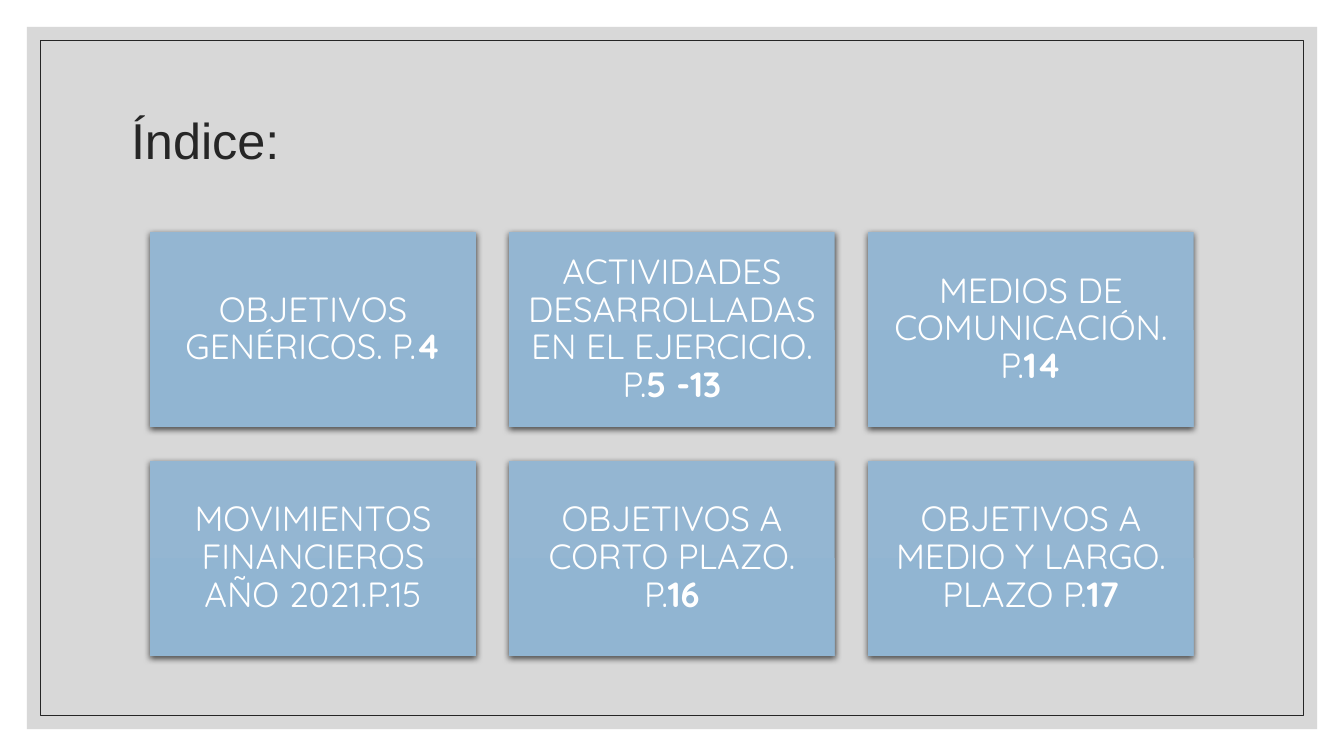
import lxml.etree
import pptx
import pptx.dml.color
import pptx.enum.shapes
import pptx.enum.text
import pptx.oxml
import pptx.oxml.ns
import pptx.util


def colour(value):
    return pptx.dml.color.RGBColor.from_string(value)


class IndexSlide:
    heading_font, card_font = "Arial", "Quicksand"
    ink, paper, panel = "262626", "FFFFFF", "BFBFBF"
    card_top, card_bottom = "94B6D2", "91B5D2"
    grid_left, grid_top = 1.49, 2.3
    card_width, card_height, gap = 3.23, 1.94, 0.33

    def __init__(self, presentation):
        self.width = presentation.slide_width
        self.height = presentation.slide_height
        self.slide = presentation.slides.add_slide(presentation.slide_layouts[5])
        background = self.slide.background.fill
        background.solid()
        background.fore_color.rgb = colour(self.paper)

    def rectangle(self, left, top, width, height):
        shape = self.slide.shapes.add_shape(
            pptx.enum.shapes.MSO_SHAPE.RECTANGLE, left, top, width, height)
        shape.shadow.inherit = False
        shape.line.fill.background()
        return shape

    def inset(self, share):
        margin = int(self.width * share)
        return self.rectangle(margin, margin,
                              self.width - 2 * margin, self.height - 2 * margin)

    def backdrop(self, share, opacity):
        panel = self.inset(share)
        panel.fill.solid()
        panel.fill.fore_color.rgb = colour(self.panel)
        tint = panel.element.spPr.find(".//" + pptx.oxml.ns.qn("a:srgbClr"))
        lxml.etree.SubElement(tint, pptx.oxml.ns.qn("a:alpha"), val=str(opacity * 1000))

    def border(self, share):
        frame = self.inset(share)
        frame.fill.background()
        frame.line.color.rgb = colour(self.ink)
        frame.line.width = pptx.util.Pt(0.5)

    def set_words(self, frame, parts, size, font, ink, alignment):
        frame.word_wrap = True
        frame.vertical_anchor = pptx.enum.text.MSO_ANCHOR.MIDDLE
        paragraph = frame.paragraphs[0]
        paragraph.alignment = alignment
        paragraph.line_spacing = 0.9
        for position, part in enumerate(parts):
            run = paragraph.add_run()
            run.text = part
            run.font.name = font
            run.font.size = pptx.util.Pt(size)
            run.font.bold = position > 0
            run.font.color.rgb = colour(ink)

    def heading(self, text, left, top, width, height):
        title = self.slide.shapes.title
        title.left, title.width = int(self.width * left), int(self.width * width)
        title.top, title.height = int(self.height * top), int(self.height * height)
        title.element.getparent().append(title.element)
        self.set_words(title.text_frame, [text], 36, self.heading_font, self.ink,
                       pptx.enum.text.PP_ALIGN.LEFT)

    def cast_shadow(self, shape):
        effects = shape.element.spPr.find(pptx.oxml.ns.qn("a:effectLst"))
        effects.append(pptx.oxml.parse_xml(
            f'<a:outerShdw {pptx.oxml.ns.nsdecls("a")} blurRad="{pptx.util.Pt(4.5)}" '
            f'dist="{pptx.util.Pt(1.5)}" dir="5400000" algn="ctr" rotWithShape="0">'
            '<a:srgbClr val="000000"><a:alpha val="63000"/></a:srgbClr></a:outerShdw>'))

    def card(self, column, row, parts):
        card = self.rectangle(
            pptx.util.Inches(self.grid_left + column * (self.card_width + self.gap)),
            pptx.util.Inches(self.grid_top + row * (self.card_height + self.gap)),
            pptx.util.Inches(self.card_width), pptx.util.Inches(self.card_height))
        card.fill.gradient()
        card.fill.gradient_angle = 270
        for stop, shade in zip(card.fill.gradient_stops, (self.card_top, self.card_bottom)):
            stop.color.rgb = colour(shade)
        self.cast_shadow(card)
        frame = card.text_frame
        frame.margin_left = frame.margin_right = pptx.util.Inches(0.1)
        frame.margin_top = frame.margin_bottom = pptx.util.Inches(0.1)
        self.set_words(frame, parts, 25, self.card_font, self.paper,
                       pptx.enum.text.PP_ALIGN.CENTER)


def main():
    sections = [
        ("OBJETIVOS GENÉRICOS. P.", "4"),
        ("ACTIVIDADES DESARROLLADAS EN EL EJERCICIO. P.", "5 -13"),
        ("MEDIOS DE COMUNICACIÓN. P.", "14"),
        ("MOVIMIENTOS FINANCIEROS AÑO 2021.P.15",),
        ("OBJETIVOS A CORTO PLAZO. P.", "16"),
        ("OBJETIVOS A MEDIO Y LARGO. PLAZO P.", "17"),
    ]
    presentation = pptx.Presentation()
    presentation.slide_width = pptx.util.Inches(13.33)
    presentation.slide_height = pptx.util.Inches(7.5)
    index = IndexSlide(presentation)
    index.backdrop(0.02, 60)
    index.border(0.03)
    index.heading("Índice:", 0.09, 0.09, 0.82, 0.2)
    for position, parts in enumerate(sections):
        row, column = divmod(position, 3)
        index.card(column, row, parts)
    presentation.save("out.pptx")


if __name__ == "__main__":
    main()
